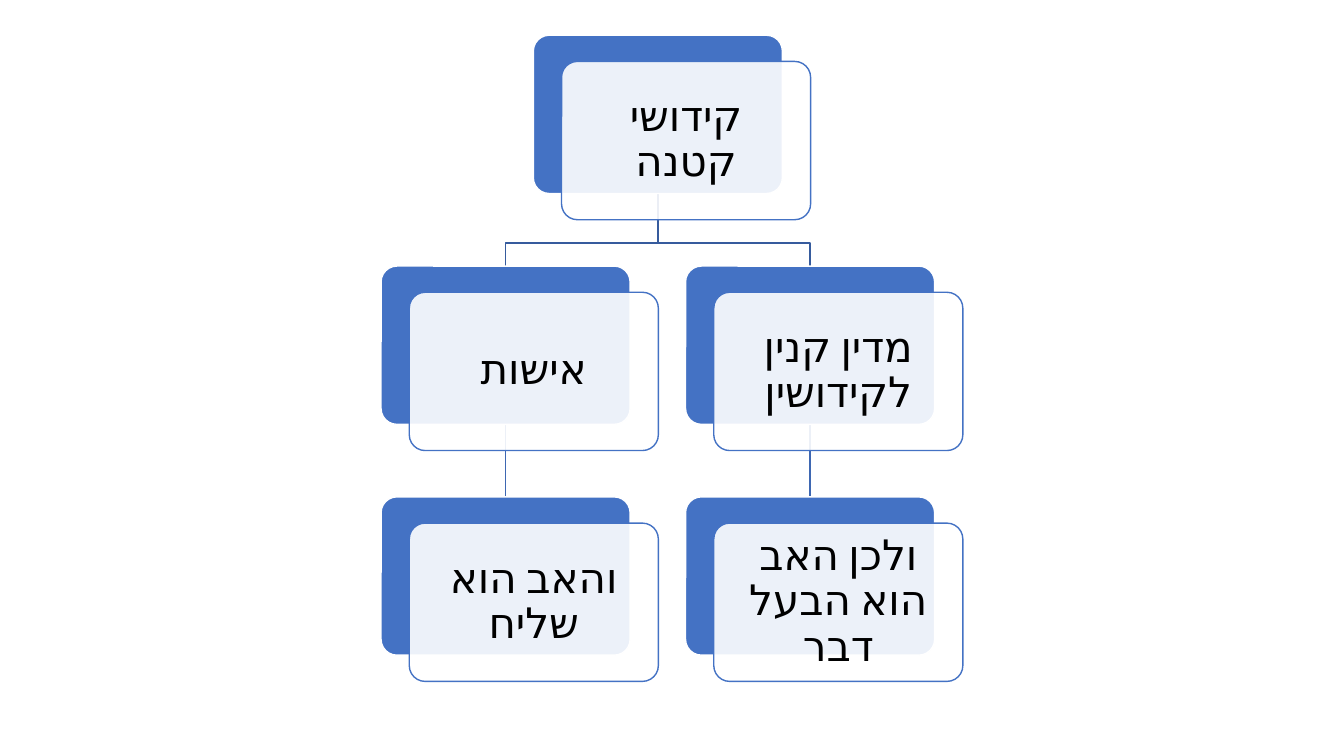
from lxml import etree
from pptx import Presentation
from pptx.dml.color import RGBColor
from pptx.enum.shapes import MSO_CONNECTOR, MSO_SHAPE
from pptx.enum.text import MSO_ANCHOR, PP_ALIGN
from pptx.oxml.ns import qn
from pptx.util import Inches, Pt

ROUNDED = MSO_SHAPE.ROUNDED_RECTANGLE
STRAIGHT = MSO_CONNECTOR.STRAIGHT
MIDDLE = MSO_ANCHOR.MIDDLE
CENTER = PP_ALIGN.CENTER

BLUE = RGBColor(0x44, 0x72, 0xC4)
ROOT_LINE = RGBColor(0x36, 0x5B, 0x9D)
BRANCH_LINE = RGBColor(0x3E, 0x67, 0xB2)
WHITE = RGBColor(0xFF, 0xFF, 0xFF)
BLACK = RGBColor(0x00, 0x00, 0x00)

LEFT, TOP = 3.78, 0.35
COLUMN, ROW = 1.51, 2.29
CARD_W, CARD_H = 2.47, 1.57
SHIFT_X, SHIFT_Y = 0.28, 0.26
ELBOW_RISE = 0.23

CARDS = [
    (1, 0, "קידושי קטנה"),
    (2, 1, "מדין קנין לקידושין"),
    (2, 2, "ולכן האב הוא הבעל דבר"),
    (0, 1, "אישות"),
    (0, 2, "והאב הוא שליח"),
]


class HierarchySlide:
    font = "Calibri"
    size = Pt(30)
    line_width = Pt(1)
    inset = Inches(0.12)

    def __init__(self, prs):
        self.s = prs.slides.add_slide(prs.slide_layouts[6])

    def corner(self, col, row):
        return LEFT + col * COLUMN, TOP + row * ROW

    def stem(self, col, row):
        x, y = self.corner(col, row)
        center = Inches(x + CARD_W / 2)
        line = self.s.shapes.add_connector(
            STRAIGHT, center, Inches(y + CARD_H), center, Inches(y + ROW))
        line.line.color.rgb = BRANCH_LINE
        line.line.width = self.line_width
        etree.SubElement(line._element.spPr, qn("a:effectLst"))

    def elbow(self, parent_col, child_col, row):
        x, y = self.corner(parent_col, row)
        start = x + CARD_W / 2
        end = start + (child_col - parent_col) * COLUMN
        bend = y + ROW - ELBOW_RISE
        points = [(start, bend), (end, bend), (end, y + ROW)]
        builder = self.s.shapes.build_freeform(
            Inches(start), Inches(y + CARD_H))
        builder.add_line_segments(
            [(Inches(px), Inches(py)) for px, py in points], close=False)
        sp = builder.convert_to_shape()
        sp.shadow.inherit = False
        sp.fill.background()
        sp.line.color.rgb = ROOT_LINE
        sp.line.width = self.line_width

    def panel(self, x, y, fill, outline):
        sp = self.s.shapes.add_shape(
            ROUNDED, Inches(x), Inches(y), Inches(CARD_W), Inches(CARD_H))
        sp.adjustments[0] = 0.1
        sp.shadow.inherit = False
        sp.fill.solid()
        sp.fill.fore_color.rgb = fill
        sp.line.color.rgb = outline
        sp.line.width = self.line_width
        return sp

    def card(self, col, row, text):
        x, y = self.corner(col, row)
        self.panel(x, y, BLUE, WHITE)
        front = self.panel(x + SHIFT_X, y + SHIFT_Y, WHITE, BLUE)
        color = front._element.spPr.find(qn("a:solidFill"))[0]
        etree.SubElement(color, qn("a:alpha")).set("val", "90000")
        self.label(front.text_frame, text)

    def label(self, tf, text):
        tf.word_wrap = True
        tf.vertical_anchor = MIDDLE
        tf.margin_left = tf.margin_right = self.inset
        tf.margin_top = tf.margin_bottom = self.inset
        p = tf.paragraphs[0]
        p.alignment = CENTER
        p.line_spacing = 0.9
        p._p.get_or_add_pPr().set("rtl", "1")
        r = p.add_run()
        r.text = text
        r.font.size = self.size
        r.font.name = self.font
        r.font.color.rgb = BLACK
        rPr = r._r.get_or_add_rPr()
        rPr.set("lang", "he-IL")
        etree.SubElement(rPr, qn("a:cs")).set("typeface", self.font)


def main():
    prs = Presentation()
    prs.slide_width, prs.slide_height = Inches(13.33), Inches(7.5)
    slide = HierarchySlide(prs)
    for col in (0, 2):
        slide.stem(col, 1)
        slide.elbow(1, col, 0)
    for col, row, text in CARDS:
        slide.card(col, row, text)
    prs.save("out.pptx")


if __name__ == "__main__":
    main()
